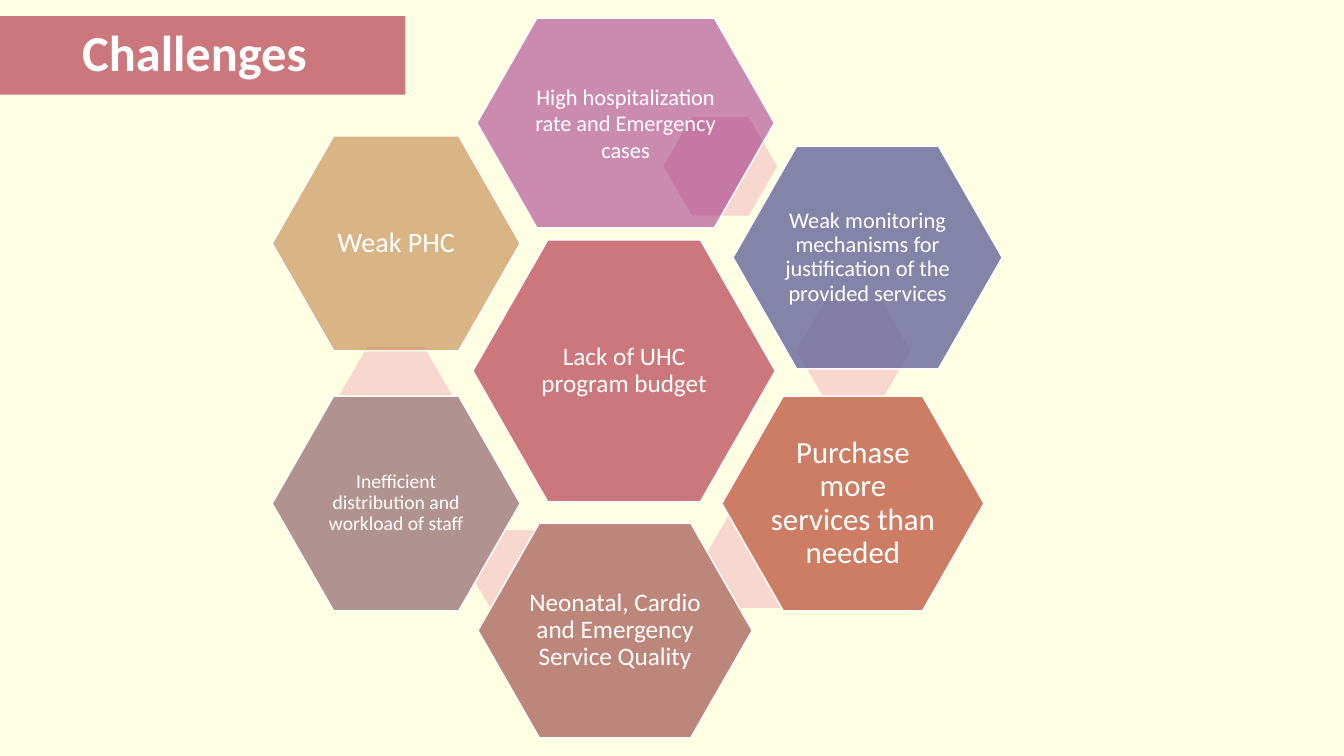
from dataclasses import dataclass
from typing import Optional

import pptx
import pptx.dml.color
import pptx.enum.shapes
import pptx.enum.text
import pptx.oxml.ns
import pptx.util
from lxml import etree

Inches = pptx.util.Inches
Pt = pptx.util.Pt
RGBColor = pptx.dml.color.RGBColor
Kind = pptx.enum.shapes.MSO_SHAPE
Align = pptx.enum.text.PP_ALIGN
Anchor = pptx.enum.text.MSO_ANCHOR

WHITE = RGBColor(0xFF, 0xFF, 0xFF)
CREAM = RGBColor(0xFF, 0xFF, 0xE4)
ROSE = RGBColor(0xCB, 0x77, 0x7B)
BLUSH = RGBColor(0xF8, 0xD7, 0xCE)
PLUM = RGBColor(0x9A, 0x22, 0x80)
SLATE = RGBColor(0x66, 0x66, 0x99)
RUST = RGBColor(0xCC, 0x7D, 0x64)
CLAY = RGBColor(0xBD, 0x86, 0x7B)
TAUPE = RGBColor(0xB0, 0x93, 0x91)
SAND = RGBColor(0xC6, 0x8C, 0x52)

FONT = "Calibri"
LINK_SIZE = (1.13, 0.98)


@dataclass
class Cell:
    text: str
    box: tuple[float, float, float, float]
    color: RGBColor
    size: int
    alpha: int = 100
    pitch: float = 0.9
    pad: float = 0.03
    link: Optional[tuple[float, float]] = None


CELLS = [
    Cell("Lack of UHC program budget", (4.69, 2.38, 3, 2.6), ROSE, 18),
    Cell("High hospitalization rate and Emergency cases",
         (4.73, 0.18, 2.95, 2.08), PLUM, 16, alpha=52, pitch=1.0, pad=0.02,
         link=(6.58, 1.16)),
    Cell("Weak monitoring mechanisms for justification of the provided services",
         (7.27, 1.45, 2.67, 2.21), SLATE, 16, alpha=80, pad=0.02,
         link=(7.9, 2.99)),
    Cell("Purchase more services than needed",
         (7.16, 3.93, 2.6, 2.13), RUST, 22, link=(6.98, 5.05)),
    Cell("Neonatal, Cardio and Emergency Service Quality",
         (4.74, 5.19, 2.72, 2.13), CLAY, 18, link=(4.7, 5.26)),
    Cell("Inefficient distribution and workload of staff",
         (2.7, 3.93, 2.46, 2.13), TAUPE, 14, pad=0.02, link=(3.36, 3.44)),
    Cell("Weak PHC", (2.7, 1.35, 2.46, 2.13), SAND, 20, alpha=65),
]


def add_form(slide, kind, box: tuple, color: RGBColor, alpha: int = 100):
    form = slide.shapes.add_shape(kind, *map(Inches, box))
    form.shadow.inherit = False
    form.line.fill.background()
    form.fill.solid()
    form.fill.fore_color.rgb = color
    if alpha < 100:
        tint = form._element.spPr.find(".//" + pptx.oxml.ns.qn("a:srgbClr"))
        etree.SubElement(tint, pptx.oxml.ns.qn("a:alpha"), val=str(alpha * 1000))
    return form


def set_text(form, text: str, size: int, pitch: float, bold: bool = False) -> None:
    frame = form.text_frame
    frame.text = text
    frame.word_wrap = True
    frame.auto_size = pptx.enum.text.MSO_AUTO_SIZE.NONE
    frame.vertical_anchor = Anchor.MIDDLE
    para = frame.paragraphs[0]
    para.alignment = Align.CENTER
    para.line_spacing = pitch
    font = para.runs[0].font
    font.name = FONT
    font.size = Pt(size)
    font.bold = bold
    font.color.rgb = WHITE


def add_cell(slide, cell: Cell) -> None:
    if cell.link:
        link = add_form(slide, Kind.HEXAGON, cell.link + LINK_SIZE, BLUSH)
        link.adjustments[0] = 0.289
    form = add_form(slide, Kind.HEXAGON, cell.box, cell.color, cell.alpha)
    form.adjustments[0] = 0.286
    form.line.color.rgb = WHITE
    form.line.width = Pt(1)
    set_text(form, cell.text, cell.size, cell.pitch)
    frame = form.text_frame
    frame.margin_left = frame.margin_right = Inches(cell.pad)
    frame.margin_top = frame.margin_bottom = Inches(cell.pad)


def add_title(slide) -> None:
    band = add_form(slide, Kind.RECTANGLE, (0, 0.16, 4.02, 0.78), ROSE)
    title = slide.shapes.title
    title.left, title.top = Inches(-4.14), Inches(0.15)
    title.width, title.height = Inches(12.14), Inches(0.79)
    set_text(title, "Challenges", 36, 0.9, bold=True)
    title._element.addprevious(band._element)


def main() -> None:
    deck = pptx.Presentation()
    deck.slide_width = Inches(13.33)
    deck.slide_height = Inches(7.5)
    slide = deck.slides.add_slide(deck.slide_layouts[5])
    slide.background.fill.solid()
    slide.background.fill.fore_color.rgb = CREAM
    add_title(slide)
    for cell in CELLS:
        add_cell(slide, cell)
    deck.save("out.pptx")


if __name__ == "__main__":
    main()
